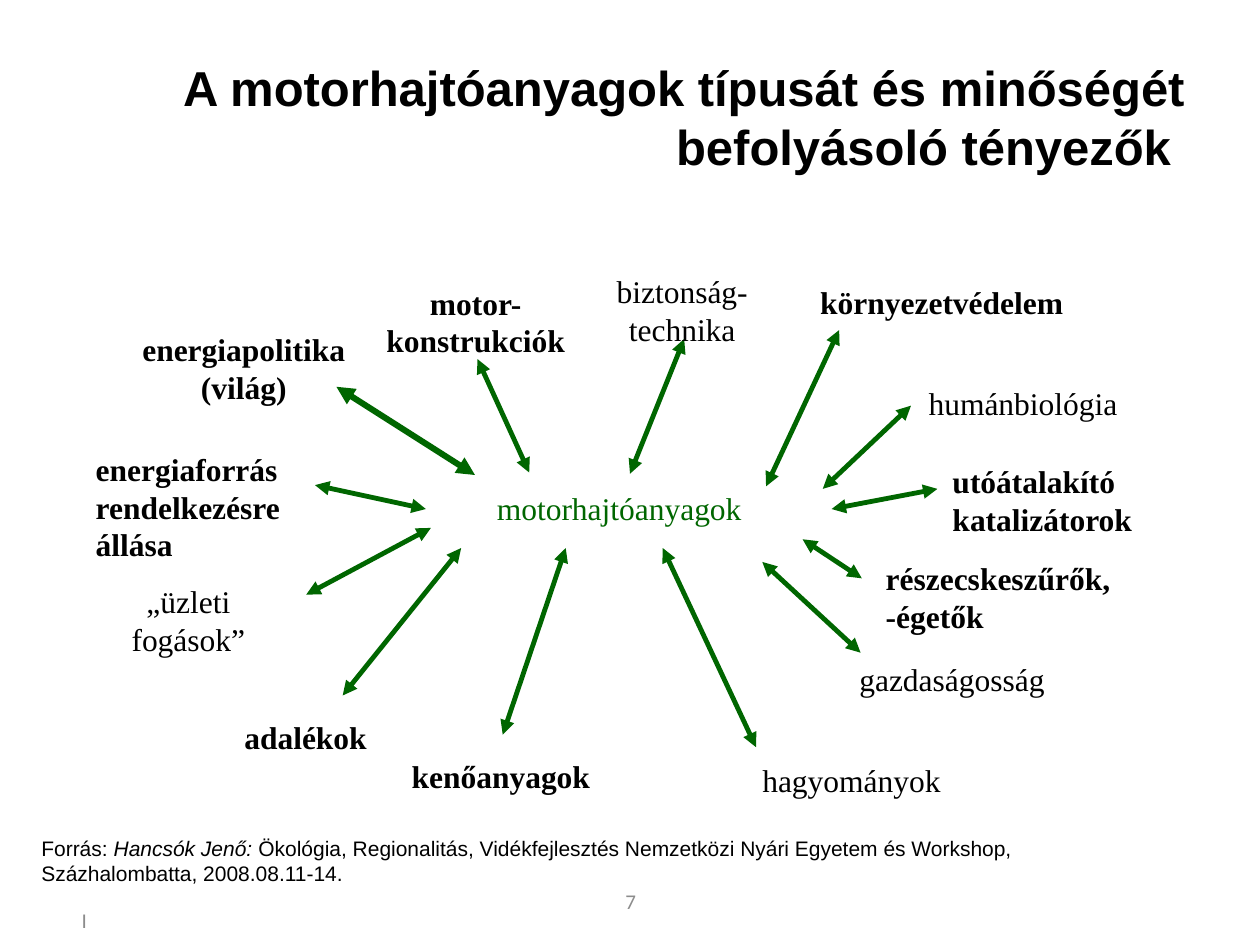
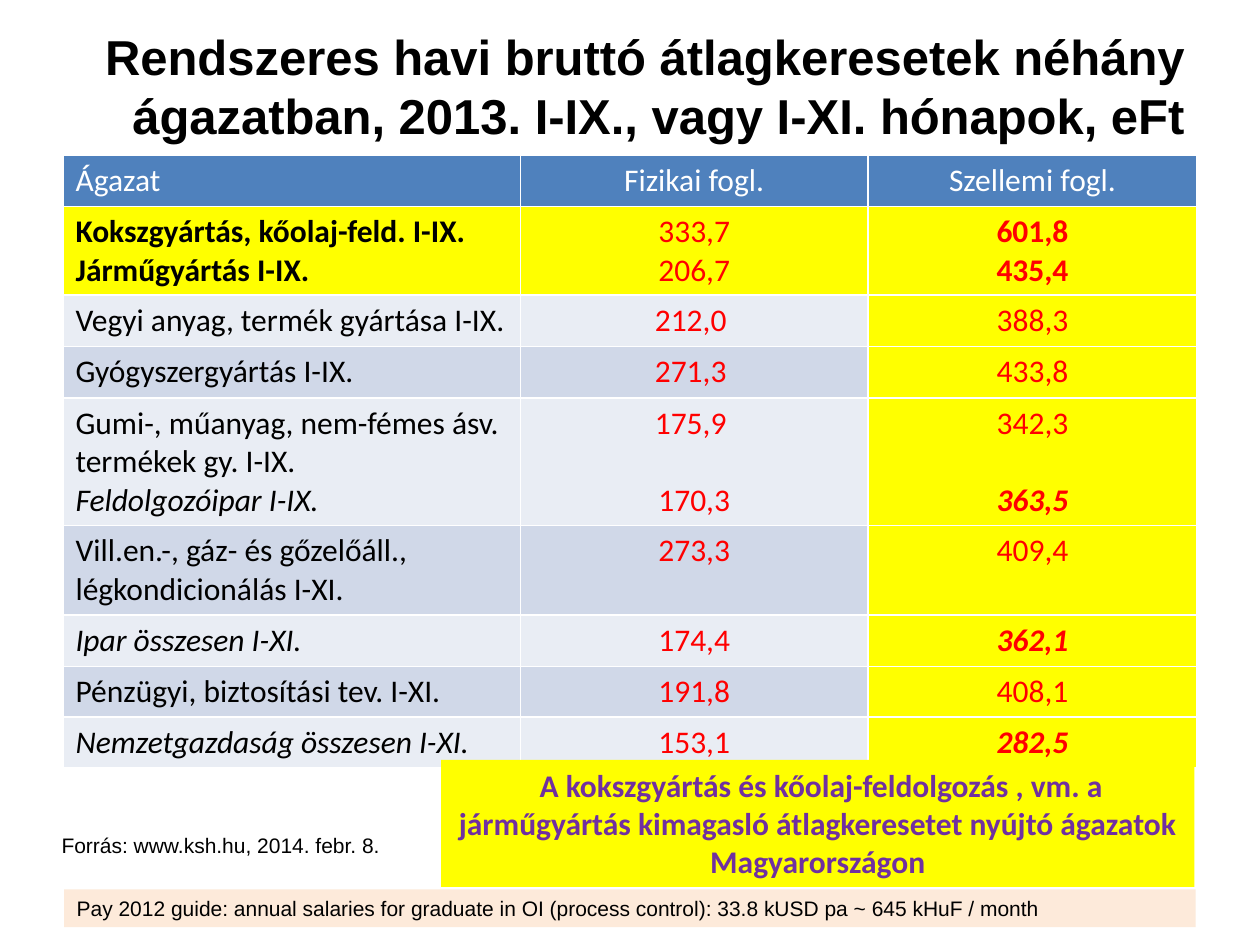
from lxml import etree
from pptx import Presentation
from pptx.dml.color import RGBColor
from pptx.enum.shapes import MSO_CONNECTOR, MSO_SHAPE
from pptx.enum.text import MSO_ANCHOR, PP_ALIGN
from pptx.oxml.ns import qn
from pptx.util import Inches, Pt

LEFT, MID, RIGHT = PP_ALIGN.LEFT, PP_ALIGN.CENTER, PP_ALIGN.RIGHT
TOP, CENTER = MSO_ANCHOR.TOP, MSO_ANCHOR.MIDDLE
RECT, LINE = MSO_SHAPE.RECTANGLE, MSO_CONNECTOR.STRAIGHT

BLACK = RGBColor(0, 0, 0)
WHITE = RGBColor(255, 255, 255)
GRAY = RGBColor(0x8C, 0x8C, 0x8C)
GREEN = RGBColor(0, 0x66, 0)
BLUE = RGBColor(0x4F, 0x81, 0xBD)
PALE = RGBColor(0xE9, 0xED, 0xF4)
BAND = RGBColor(0xD0, 0xD8, 0xE8)
YELLOW = RGBColor(255, 255, 0)
RED = RGBColor(255, 0, 0)
PURPLE = RGBColor(0x70, 0x30, 0xA0)
PEACH = RGBColor(0xFD, 0xEA, 0xDA)
SANS, BODY, SERIF = "Arial", "Calibri", "Times New Roman"

# Slide 1: text, box, style, alignment, inner and outer arrow tip
FACTORS = [
    ("környezetvédelem", (6.51, 2.25, 2.14, 0.34), "b", LEFT, (6.08, 3.86), (6.66, 2.62)),
    ("humánbiológia", (7.37, 3.05, 1.88, 0.34), "", LEFT, (6.53, 3.88), (7.23, 3.22)),
    ("utóátalakító\nkatalizátorok", (7.56, 3.67, 1.53, 0.66), "b", LEFT, (6.6, 4.04), (7.44, 3.88)),
    ("részecskeszűrők, \n-égetők", (7.03, 4.44, 2.06, 0.63), "b", LEFT, (6.37, 4.28), (6.84, 4.59)),
    ("gazdaságosság", (6.82, 5.24, 1.88, 0.34), "", LEFT, (6.05, 4.46), (6.83, 5.18)),
    ("hagyományok", (6.05, 6.04, 1.88, 0.34), "", LEFT, (5.26, 4.35), (6, 5.93)),
    ("kenőanyagok", (3.15, 6.01, 1.65, 0.37), "b", MID, (4.49, 4.35), (3.99, 5.83)),
    ("adalékok", (1.67, 5.7, 1.51, 0.37), "b", MID, (3.66, 4.35), (2.72, 5.52)),
    ("„üzleti fogások”", (0.74, 4.62, 1.51, 0.64), "", MID, (3.42, 4.19), (2.43, 4.72)),
    ("energiaforrás\nrendelkezésre\nállása", (0.76, 3.57, 1.74, 0.86), "b", LEFT, (3.38, 4.04), (2.5, 3.85)),
    ("energiapolitika\n(világ)", (1.06, 2.62, 1.75, 0.71), "b", MID, (3.77, 3.77), (2.67, 3.07)),
    ("motor-\nkonstrukciók", (3.02, 2.25, 1.51, 0.71), "b", MID, (4.2, 3.75), (3.79, 2.85)),
    ("biztonság-\ntechnika", (4.66, 2.16, 1.51, 0.71), "", MID, (5, 3.76), (5.43, 2.69)),
]
STRONG = "energiapolitika"
SOURCE = [("Forrás: ", ""), ("Hancsók Jenő:", "i"),
          (" Ökológia, Regionalitás, Vidékfejlesztés Nemzetközi Nyári Egyetem "
           "és Workshop, Százhalombatta, 2008.08.11-14.", "")]

# Slide 2: each cell lists its paragraphs as (text, style)
HEADS = ["Ágazat", "Fizikai fogl.", "Szellemi fogl."]
WAGES = [
    ([("Kokszgyártás, kőolaj-feld. I-IX.", "b"), ("Járműgyártás I-IX.", "b")],
     [("333,7", ""), ("206,7", "")], [("601,8", "b"), ("435,4", "b")]),
    ([("Vegyi anyag, termék gyártása I-IX.", "")], [("212,0 ", "")], [("388,3", "")]),
    ([("Gyógyszergyártás I-IX.", "")], [("271,3 ", "")], [("433,8", "")]),
    ([("Gumi-, műanyag, nem-fémes ásv. termékek gy. I-IX.", ""),
      ("Feldolgozóipar I-IX.", "i")],
     [("175,9 ", ""), ("170,3", "")], [("342,3", ""), ("363,5", "bi")]),
    ([("Vill.en.-, gáz- és gőzelőáll., légkondicionálás I-XI.", "")],
     [("273,3", "")], [("409,4", "")]),
    ([("Ipar összesen I-XI.", "i")], [("174,4", "")], [("362,1", "bi")]),
    ([("Pénzügyi, biztosítási tev. I-XI.", "")], [("191,8", "")], [("408,1", "")]),
    ([("Nemzetgazdaság összesen I-XI.", "i")], [("153,1", "")], [("282,5", "bi")]),
]
WIDTHS = [3.63, 2.76, 2.61]
HEIGHTS = [0.41, 0.7, 0.41, 0.41, 1.01, 0.71, 0.41, 0.4, 0.4]
TALL, SKIP = 4, 22  # row whose second figure drops one line, in points


def write(frame, paras, size=18, font=BODY, color=BLACK, align=LEFT,
          anchor=TOP, gap=0, inset=None):
    """Fill a frame; each paragraph is a list of (text, style) runs."""
    frame.word_wrap = True
    frame.vertical_anchor = anchor
    if inset is not None:
        frame.margin_left = frame.margin_right = Inches(inset)
        frame.margin_top = frame.margin_bottom = Inches(inset)
    for n, runs in enumerate(paras):
        para = frame.add_paragraph() if n else frame.paragraphs[0]
        para.alignment = align
        para.space_before = Pt(gap if n else 0)
        for text, style in runs:
            for k, part in enumerate(text.split("\n")):
                if k:
                    para.add_line_break()
                run = para.add_run()
                run.text = part
                run.font.size, run.font.name = Pt(size), font
                run.font.color.rgb = color
                run.font.bold, run.font.italic = "b" in style, "i" in style


def label(slide, spot, text, style="", **form):
    box = slide.shapes.add_textbox(*map(Inches, spot))
    write(box.text_frame, [[(text, style)]], **form)


def title(slide, top, text):
    label(slide, (0.5, top, 9, 1.25), text, "b", size=28, font=SANS,
          align=RIGHT, anchor=CENTER)


def panel(slide, spot, fill, text, style="", **form):
    shape = slide.shapes.add_shape(RECT, *map(Inches, spot))
    shape.shadow.inherit = False
    shape.fill.solid()
    shape.fill.fore_color.rgb = fill
    shape.line.fill.background()
    write(shape.text_frame, [[(text, style)]], **form)


def arrow(slide, start, end, width):
    line = slide.shapes.add_connector(LINE, *map(Inches, start + end))
    line.line.color.rgb = GREEN
    line.line.width = Pt(width)
    props = line.line._get_or_add_ln()
    for tag in ("a:headEnd", "a:tailEnd"):
        etree.SubElement(props, qn(tag), type="triangle")
    etree.SubElement(line._element.spPr, qn("a:effectLst"))


def paint(cell, fill):
    """Set a cell's fill and thin white borders."""
    cell.fill.solid()
    cell.fill.fore_color.rgb = fill
    props = cell._tc.get_or_add_tcPr()
    for n, side in enumerate("LRTB"):
        edge = etree.Element(qn("a:ln" + side), w=str(Pt(1)))
        solid = etree.SubElement(edge, qn("a:solidFill"))
        etree.SubElement(solid, qn("a:srgbClr"), val=str(WHITE))
        props.insert(n, edge)


def draw_web(slide):
    title(slide, 0.3, "A motorhajtóanyagok típusát és minőségét befolyásoló tényezők ")
    for text, spot, style, align, inner, outer in FACTORS:
        arrow(slide, inner, outer, 3.5 if text.startswith(STRONG) else 2.75)
        label(slide, spot, text, style, font=SERIF, align=align, inset=0)
    label(slide, (3.42, 3.88, 2.99, 0.34), "motorhajtóanyagok", font=SERIF,
          color=GREEN, align=MID, inset=0)
    # Source and footer
    box = slide.shapes.add_textbox(*map(Inches, (0.23, 6.58, 9.14, 0.5)))
    write(box.text_frame, [SOURCE], size=12, font=SANS)
    foot = dict(size=12, color=GRAY, anchor=CENTER)
    label(slide, (0.55, 7.1, 2.33, 0.4), "I", **foot)
    label(slide, (3.42, 6.95, 3.17, 0.4), "7", align=MID, **foot)


def draw_wages(slide):
    title(slide, 0.05, "Rendszeres havi bruttó átlagkeresetek néhány ágazatban, "
                       "2013. I-IX., vagy I-XI. hónapok, eFt")
    # Wage table
    area = map(Inches, (0.5, 1.23, sum(WIDTHS), sum(HEIGHTS)))
    table = slide.shapes.add_table(len(HEIGHTS), len(WIDTHS), *area).table
    for col, width in zip(table.columns, WIDTHS):
        col.width = Inches(width)
    for row, height in zip(table.rows, HEIGHTS):
        row.height = Inches(height)
    for c, head in enumerate(HEADS):
        cell = table.cell(0, c)
        paint(cell, BLUE)
        write(cell.text_frame, [[(head, "")]], color=WHITE, align=MID if c else LEFT)
    for r, row in enumerate(WAGES, 1):
        for c, paras in enumerate(row):
            cell = table.cell(r, c)
            paint(cell, YELLOW if r == 1 or c == 2 else BAND if r % 2 else PALE)
            write(cell.text_frame, [[run] for run in paras],
                  color=RED if c else BLACK, align=MID if c else LEFT,
                  gap=SKIP if r == TALL and c else 0)
    # Source and remarks
    label(slide, (0.39, 6.56, 6.33, 0.3), "Forrás: www.ksh.hu, 2014. febr. 8.",
          size=12, font=SANS)
    panel(slide, (3.5, 6.03, 5.98, 1.01), YELLOW,
          " A kokszgyártás és kőolaj-feldolgozás , vm. a járműgyártás kimagasló "
          "átlagkeresetet nyújtó ágazatok Magyarországon", "b",
          color=PURPLE, align=MID)
    panel(slide, (0.51, 7.06, 8.98, 0.3), PEACH,
          "Pay 2012 guide: annual salaries for graduate in OI (process control): "
          "33.8 kUSD pa ~ 645 kHuF / month", size=12, font=SANS)


def main():
    deck = Presentation()
    deck.slide_width, deck.slide_height = Inches(10), Inches(7.5)
    for draw in (draw_web, draw_wages):
        draw(deck.slides.add_slide(deck.slide_layouts[6]))
    deck.save("out.pptx")


if __name__ == "__main__":
    main()
